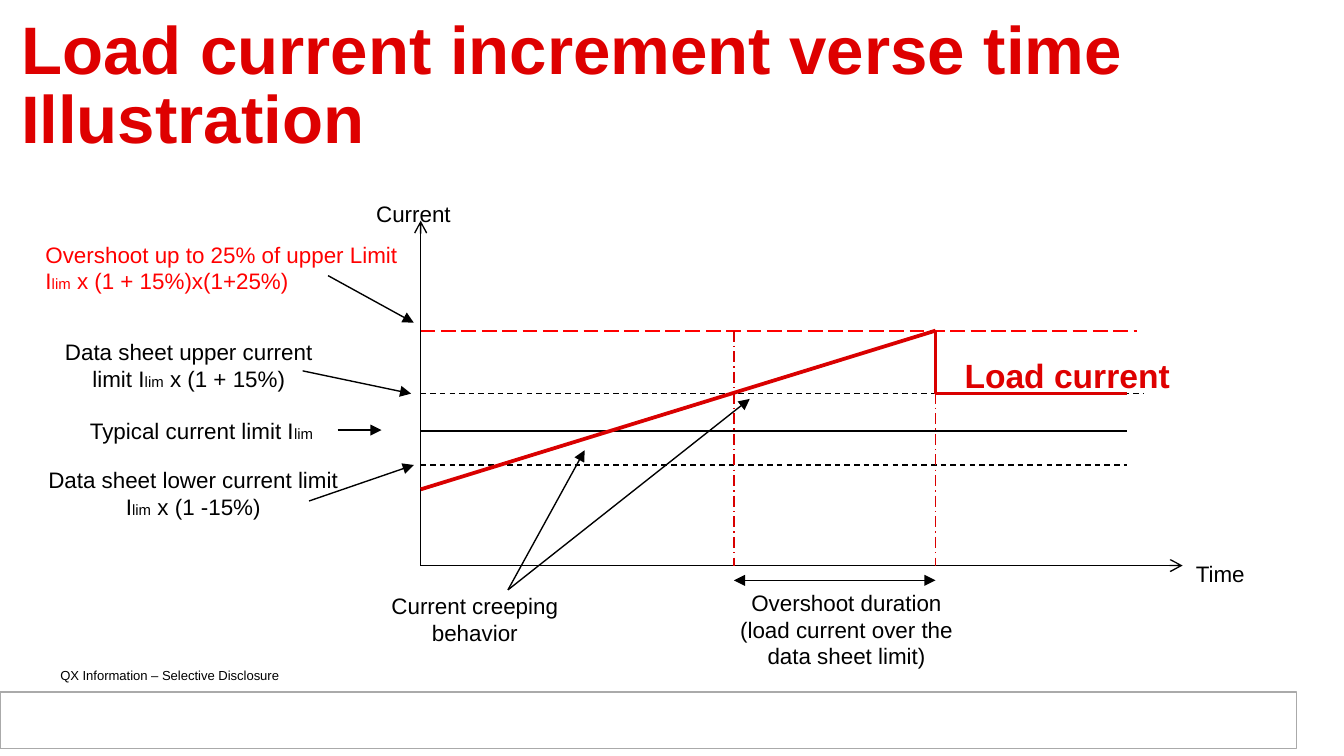
"""Build a slide that plots load current against time with its limits."""
from lxml import etree
from pptx import Presentation
from pptx.dml.color import RGBColor
from pptx.enum.dml import MSO_LINE
from pptx.enum.shapes import MSO_CONNECTOR, MSO_SHAPE
from pptx.enum.text import MSO_ANCHOR, PP_ALIGN
from pptx.oxml.ns import qn
from pptx.util import Cm, Pt

STRAIGHT = MSO_CONNECTOR.STRAIGHT
RECTANGLE = MSO_SHAPE.RECTANGLE
DASH, LONG_DASH, DASH_DOT = MSO_LINE.DASH, MSO_LINE.LONG_DASH, MSO_LINE.LONG_DASH_DOT
TOP, MIDDLE = MSO_ANCHOR.TOP, MSO_ANCHOR.MIDDLE
LEFT, CENTER = PP_ALIGN.LEFT, PP_ALIGN.CENTER

BLACK, RED, TITLE_RED, LOAD_RED = "000000", "FF0000", "DE0000", "D90000"
SUBSCRIPT_SIZE = 8
ORIGIN_X, ORIGIN_Y = 7.95, 10.69
OVERSHOOT_Y, UPPER_Y, TYPICAL_Y, LOWER_Y = 6.25, 7.44, 8.15, 8.79
CROSS_X, PEAK_X, END_X = 13.87, 17.68, 21.29
CREEP_X, CREEP_Y = 9.6, 11.15
DURATION_Y = 10.97


def color(value):
    return RGBColor.from_string(value)


presentation = Presentation()
presentation.slide_width, presentation.slide_height = Cm(25.4), Cm(14.29)
slide = presentation.slides.add_slide(presentation.slide_layouts[6])

footer_bar = slide.shapes.add_shape(RECTANGLE, Cm(0), Cm(13.08), Cm(24.51), Cm(1.07))
footer_bar.shadow.inherit = False
footer_bar.fill.solid()
footer_bar.fill.fore_color.rgb = color("FFFFFF")
footer_bar.line.color.rgb = color("AAAAAA")
footer_bar.line.width = Pt(0.75)

lines = [
    (ORIGIN_X, ORIGIN_Y, 22.35, ORIGIN_Y, BLACK, 0.75, None, {"tailEnd": "arrow"}),
    (ORIGIN_X, ORIGIN_Y, ORIGIN_X, 4.17, BLACK, 0.75, None, {"tailEnd": "arrow"}),
    (ORIGIN_X, LOWER_Y, END_X, LOWER_Y, BLACK, 0.75, DASH, {}),
    (ORIGIN_X, UPPER_Y, 21.62, UPPER_Y, BLACK, 0.75, DASH, {}),
    (ORIGIN_X, OVERSHOOT_Y, 21.49, OVERSHOOT_Y, RED, 1, LONG_DASH, {}),
    (ORIGIN_X, TYPICAL_Y, END_X, TYPICAL_Y, BLACK, 1, None, {}),
    (ORIGIN_X, 9.25, PEAK_X, OVERSHOOT_Y, LOAD_RED, 2, None, {}),
    (PEAK_X, OVERSHOOT_Y, PEAK_X, UPPER_Y, LOAD_RED, 2, None, {}),
    (PEAK_X, UPPER_Y, END_X, UPPER_Y, LOAD_RED, 2, None, {}),
    (CROSS_X, OVERSHOOT_Y, CROSS_X, ORIGIN_Y, LOAD_RED, 0.75, DASH_DOT, {}),
    (PEAK_X, OVERSHOOT_Y, PEAK_X, ORIGIN_Y, LOAD_RED, 0.75, DASH_DOT, {}),
    (CROSS_X, DURATION_Y, PEAK_X, DURATION_Y, BLACK, 0.75, None,
     {"headEnd": "triangle", "tailEnd": "triangle"}),
]
pointers = [
    (6.2, 5.21, 7.82, 6.1),
    (5.72, 7.01, 7.77, UPPER_Y),
    (6.38, 8.13, 7.21, 8.13),
    (5.84, 9.47, 7.82, LOWER_Y),
    (CREEP_X, CREEP_Y, 11.05, 8.51),
    (CREEP_X, CREEP_Y, 14.17, 7.54),
]
lines += [(*ends, BLACK, 0.75, None, {"tailEnd": "triangle"}) for ends in pointers]

for x1, y1, x2, y2, line_color, width, dash, arrowheads in lines:
    connector = slide.shapes.add_connector(STRAIGHT, Cm(x1), Cm(y1), Cm(x2), Cm(y2))
    connector.line.color.rgb = color(line_color)
    connector.line.width = Pt(width)
    if dash:
        connector.line.dash_style = dash
    properties = connector._element.spPr
    for end, kind in arrowheads.items():
        etree.SubElement(properties.find(qn("a:ln")), qn(f"a:{end}"), type=kind)
    etree.SubElement(properties, qn("a:effectLst"))

label = {"size": 12, "color": BLACK, "bold": False, "align": LEFT, "wrap": True,
         "anchor": TOP, "spacing": 1, "margins": (0.25, 0.13)}
centered = {**label, "align": CENTER}
unwrapped = {**label, "wrap": False}
tight = {**label, "margins": (0.2, 0.1)}
heading = {**tight, "size": 36, "color": TITLE_RED, "bold": True, "anchor": MIDDLE,
           "spacing": 0.85}

texts = [
    (0.2, 0.48, 25.1, 2.39, heading, ["Load current increment verse time Illustration"]),
    (0.94, 12.52, 5.87, 0.51, {**tight, "size": 7},
     ["QX Information – Selective Disclosure"]),
    (0.61, 4.42, 7.19, 1.27, {**label, "color": RED},
     ["Overshoot up to 25% of upper Limit", "Ilim x (1 + 15%)x(1+25%)"]),
    (1.45, 7.75, 4.93, 0.76, label, ["Typical current limit Ilim"]),
    (0.74, 6.27, 5.66, 1.27, centered, ["Data sheet upper current limit Ilim x (1 + 15%)"]),
    (0.66, 8.69, 5.99, 1.27, centered,
     ["Data sheet lower current limit", "Ilim x (1 -15%)"]),
    (6.86, 3.66, 1.93, 0.76, unwrapped, ["Current"]),
    (22.35, 10.46, 1.45, 0.76, unwrapped, ["Time"]),
    (13.36, 11, 5.28, 1.8, centered,
     ["Overshoot duration", "(load current over the data sheet limit)"]),
    (17.98, 6.58, 4.42, 1.02,
     {**unwrapped, "size": 18, "color": TITLE_RED, "bold": True}, ["Load current"]),
    (6.88, 11.07, 4.19, 1.27, centered, ["Current creeping behavior"]),
]

for left, top, width, height, style, paragraphs in texts:
    text_box = slide.shapes.add_textbox(Cm(left), Cm(top), Cm(width), Cm(height))
    text_frame = text_box.text_frame
    side, edge = (Cm(margin) for margin in style["margins"])
    frame_format = {"word_wrap": style["wrap"], "vertical_anchor": style["anchor"],
                    "margin_left": side, "margin_right": side,
                    "margin_top": edge, "margin_bottom": edge}
    for name, value in frame_format.items():
        setattr(text_frame, name, value)
    for index, text in enumerate(paragraphs):
        paragraph = text_frame.add_paragraph() if index else text_frame.paragraphs[0]
        paragraph.alignment = style["align"]
        paragraph.line_spacing = style["spacing"]
        before, symbol, after = text.partition("Ilim")
        pieces = [(before + symbol[:1], style["size"]), (symbol[1:], SUBSCRIPT_SIZE),
                  (after, style["size"])]
        for piece, size in pieces:
            if piece:
                run = paragraph.add_run()
                run.text = piece
                font_format = {"name": "Arial", "size": Pt(size), "bold": style["bold"]}
                for name, value in font_format.items():
                    setattr(run.font, name, value)
                run.font.color.rgb = color(style["color"])

presentation.save("out.pptx")
